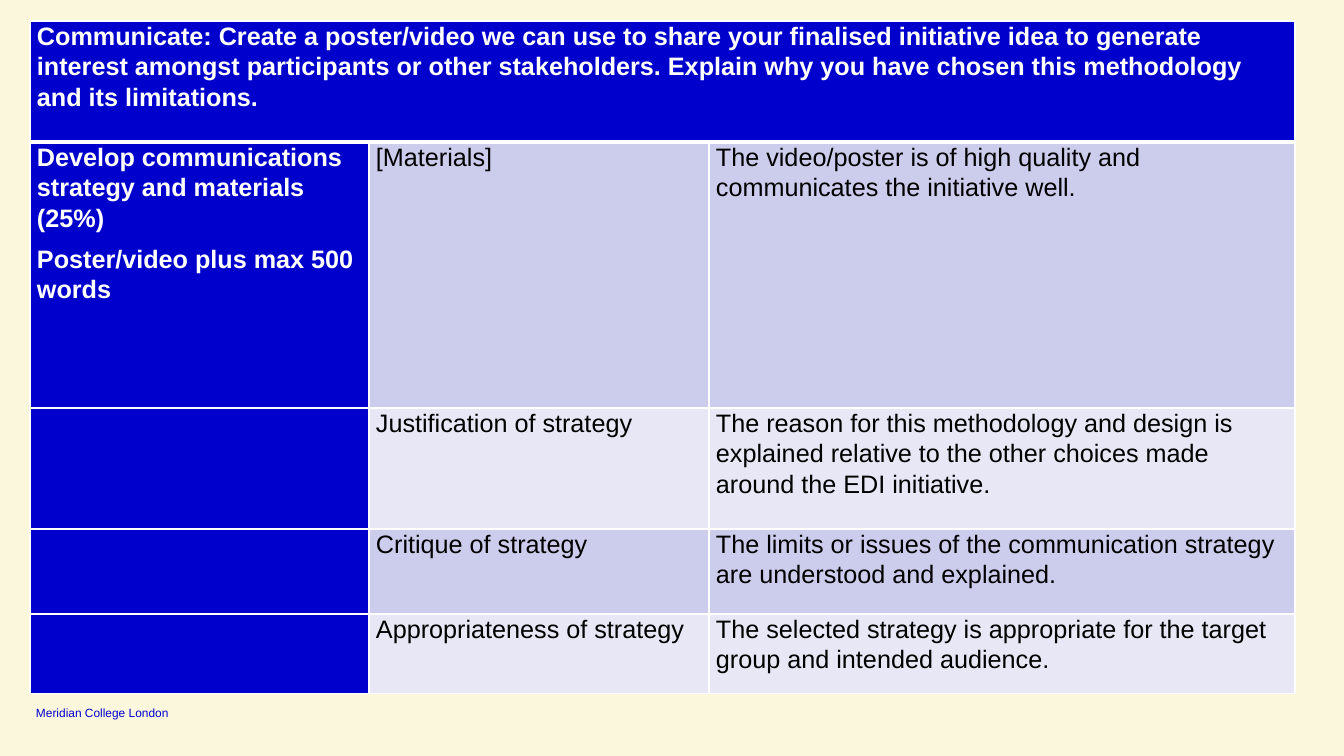
from lxml import etree
from pptx import Presentation
from pptx.dml.color import RGBColor
from pptx.enum.text import MSO_ANCHOR
from pptx.oxml.ns import qn
from pptx.util import Emu, Pt

BOTTOM = MSO_ANCHOR.BOTTOM
EMU_PER_PX = 914400 / 100.8
FONT = "Arial"
COLORS = {
    "page": "FBF7DC",
    "blue": "0000CD",
    "band_dark": "CCCCED",
    "band_light": "E7E7F6",
    "white": "FFFFFF",
    "black": "000000",
}
COLUMN_WIDTHS = [339, 340, 586]
ROW_HEIGHTS = [121, 266, 121, 85, 80]
HEADING = (
    "Communicate: Create a poster/video we can use to share your finalised "
    "initiative idea to generate interest amongst participants or other "
    "stakeholders. Explain why you have chosen this methodology and its limitations."
)
TASK = "Develop communications strategy and materials (25%)\nPoster/video plus max 500 words"
CRITERIA = [
    (TASK, "[Materials]",
     "The video/poster is of high quality and communicates the initiative well."),
    ("", "Justification of strategy",
     "The reason for this methodology and design is explained relative to the "
     "other choices made around the EDI initiative."),
    ("", "Critique of strategy",
     "The limits or issues of the communication strategy are understood and explained."),
    ("", "Appropriateness of strategy",
     "The selected strategy is appropriate for the target group and intended audience."),
]


def px(length):
    return Emu(round(length * EMU_PER_PX))


def rgb(name):
    return RGBColor.from_string(COLORS[name])


def style_font(font, size, color, bold=False):
    font.name = FONT
    font.size = Pt(size)
    font.bold = bold
    font.color.rgb = rgb(color)


def add_borders(cell, top, bottom):
    """Draw white cell borders; must run before the fill is set, as XML order matters."""
    properties = cell._tc.get_or_add_tcPr()
    for side, points in (("L", 1), ("R", 1), ("T", top), ("B", bottom)):
        line = etree.SubElement(properties, qn(f"a:ln{side}"), w=str(Pt(points)))
        fill = etree.SubElement(line, qn("a:solidFill"))
        etree.SubElement(fill, qn("a:srgbClr"), val=COLORS["white"])


def fill_cell(cell, text, fill, color, bold, top=1, bottom=1):
    add_borders(cell, top, bottom)
    cell.fill.solid()
    cell.fill.fore_color.rgb = rgb(fill)
    cell.margin_left = cell.margin_right = px(7)
    cell.margin_top = cell.margin_bottom = 0
    cell.text_frame.text = text
    for para in cell.text_frame.paragraphs:
        para.line_spacing = 1.07
        para.space_after = Pt(8)
        for span in para.runs:
            style_font(span.font, 18, color, bold)


def add_criteria_table(page):
    frame = page.shapes.add_table(
        len(ROW_HEIGHTS), len(COLUMN_WIDTHS), px(30), px(21),
        px(sum(COLUMN_WIDTHS)), px(sum(ROW_HEIGHTS)))
    table = frame.table
    table.first_row = table.horz_banding = False
    for column, width in zip(table.columns, COLUMN_WIDTHS):
        column.width = px(width)
    for row, height in zip(table.rows, ROW_HEIGHTS):
        row.height = px(height)

    last = len(COLUMN_WIDTHS) - 1
    for index in range(last + 1):
        text = HEADING if index == 0 else ""
        fill_cell(table.cell(0, index), text, "blue", "white", True, bottom=3)
    table.cell(0, 0).merge(table.cell(0, last))

    for row, texts in enumerate(CRITERIA, start=1):
        band = "band_dark" if row % 2 else "band_light"
        top = 3 if row == 1 else 1
        for column, text in enumerate(texts):
            first = column == 0
            fill_cell(table.cell(row, column), text, "blue" if first else band,
                      "white" if first else "black", first, top=top)


def add_footer(page, text):
    box = page.shapes.add_textbox(px(36), px(705), px(156), px(15))
    frame = box.text_frame
    frame.word_wrap = True
    frame.vertical_anchor = BOTTOM
    frame.margin_left = frame.margin_right = frame.margin_top = frame.margin_bottom = 0
    frame.text = text
    style_font(frame.paragraphs[0].runs[0].font, 8.5, "blue")


def main():
    deck = Presentation()
    deck.slide_width, deck.slide_height = px(1344), px(756)
    page = deck.slides.add_slide(deck.slide_layouts[6])
    page.background.fill.solid()
    page.background.fill.fore_color.rgb = rgb("page")
    add_footer(page, "Meridian College London")
    add_criteria_table(page)
    deck.save("out.pptx")


if __name__ == "__main__":
    main()
